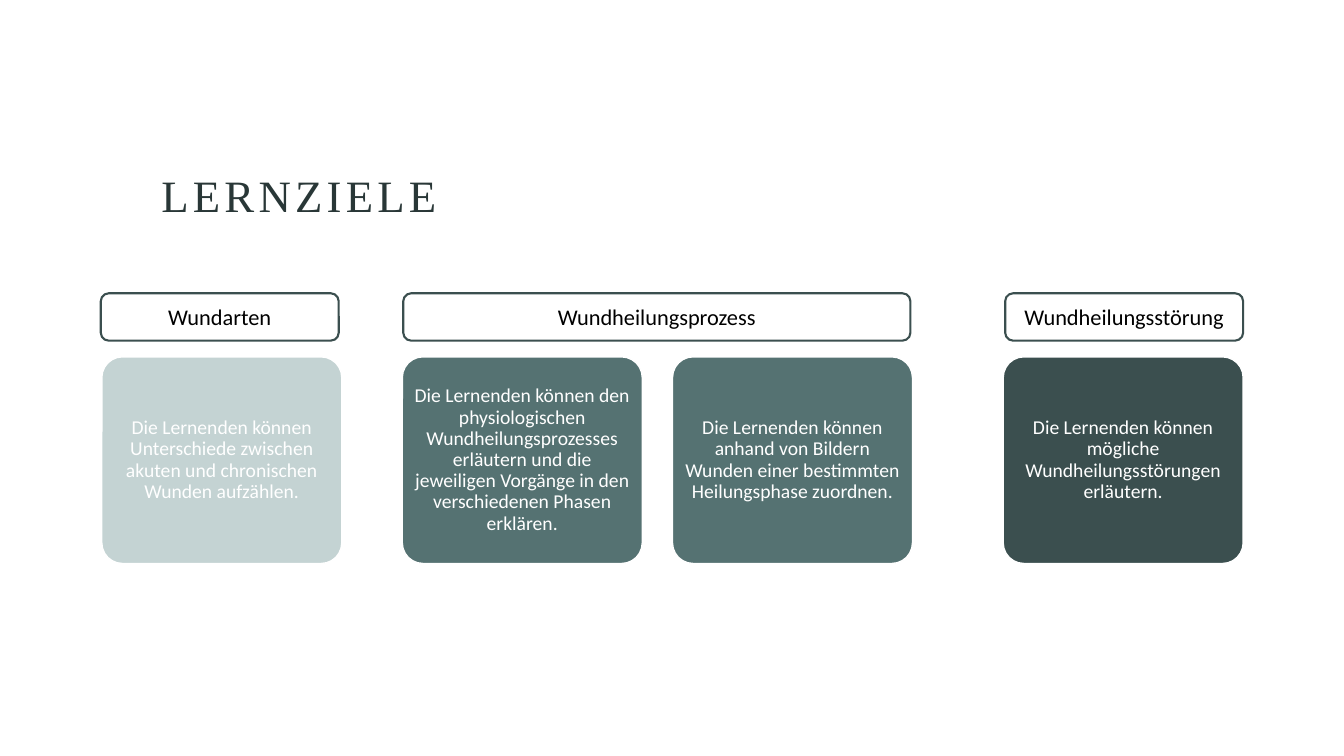
from pptx import Presentation
from pptx.dml.color import RGBColor
from pptx.enum import shapes, text
from pptx.util import Inches, Pt

WHITE = RGBColor(0xFF, 0xFF, 0xFF)
BLACK = RGBColor(0, 0, 0)
INK = RGBColor(0x29, 0x37, 0x37)
PALE = RGBColor(0xC4, 0xD3, 0xD3)
TEAL = RGBColor(0x55, 0x72, 0x72)
DARK = RGBColor(0x3B, 0x4F, 0x4F)

deck = Presentation()
deck.slide_width = Inches(13.33)
deck.slide_height = Inches(7.5)
slide = deck.slides.add_slide(deck.slide_layouts[5])


def style(para, font, size, color, align):
    para.alignment = align
    run = para.runs[0]
    run.font.name = font
    run.font.size = Pt(size)
    run.font.color.rgb = color
    return run


def box(left, top, width, height, words, size, color):
    shape = slide.shapes.add_shape(
        shapes.MSO_SHAPE.ROUNDED_RECTANGLE,
        Inches(left), Inches(top), Inches(width), Inches(height))
    shape.shadow.inherit = False
    frame = shape.text_frame
    frame.word_wrap = True
    frame.vertical_anchor = text.MSO_ANCHOR.MIDDLE
    frame.text = words
    style(frame.paragraphs[0], "Calibri", size, color, text.PP_ALIGN.CENTER)
    return shape


title = slide.shapes.title
title.left, title.top = Inches(1.5), Inches(0.75)
title.width, title.height = Inches(10.38), Inches(1.5)
frame = title.text_frame
frame.text = "LERNZIELE"
frame.vertical_anchor = text.MSO_ANCHOR.BOTTOM
para = frame.paragraphs[0]
para.line_spacing = 0.9
run = style(para, "Times New Roman", 32, INK, text.PP_ALIGN.LEFT)
run.font._element.set("spc", "300")

goals = [
    (1.01, PALE, "Die Lernenden können Unterschiede zwischen akuten und "
     "chronischen Wunden aufzählen."),
    (3.99, TEAL, "Die Lernenden können den physiologischen "
     "Wundheilungsprozesses erläutern und die jeweiligen Vorgänge in den "
     "verschiedenen Phasen erklären."),
    (6.67, TEAL, "Die Lernenden können anhand von Bildern Wunden einer "
     "bestimmten Heilungsphase zuordnen."),
    (9.95, DARK, "Die Lernenden können mögliche Wundheilungsstörungen "
     "erläutern."),
]
for left, fill, words in goals:
    card = box(left, 3.54, 2.38, 2.05, words, 14, WHITE)
    card.adjustments[0] = 0.1
    card.fill.solid()
    card.fill.fore_color.rgb = fill
    card.line.color.rgb = WHITE
    card.line.width = Pt(1)
    frame = card.text_frame
    frame.margin_left = frame.margin_right = Inches(0.03)
    frame.margin_top = frame.margin_bottom = Inches(0.02)
    frame.paragraphs[0].line_spacing = 0.9

heads = [
    (1, 2.36, "Wundarten"),
    (4, 5.03, "Wundheilungsprozess"),
    (9.97, 2.36, "Wundheilungsstörung"),
]
for left, width, words in heads:
    head = box(left, 2.91, width, 0.47, words, 16, BLACK)
    head.fill.background()
    head.line.color.rgb = DARK
    head.line.width = Pt(1.5)

deck.save("out.pptx")
